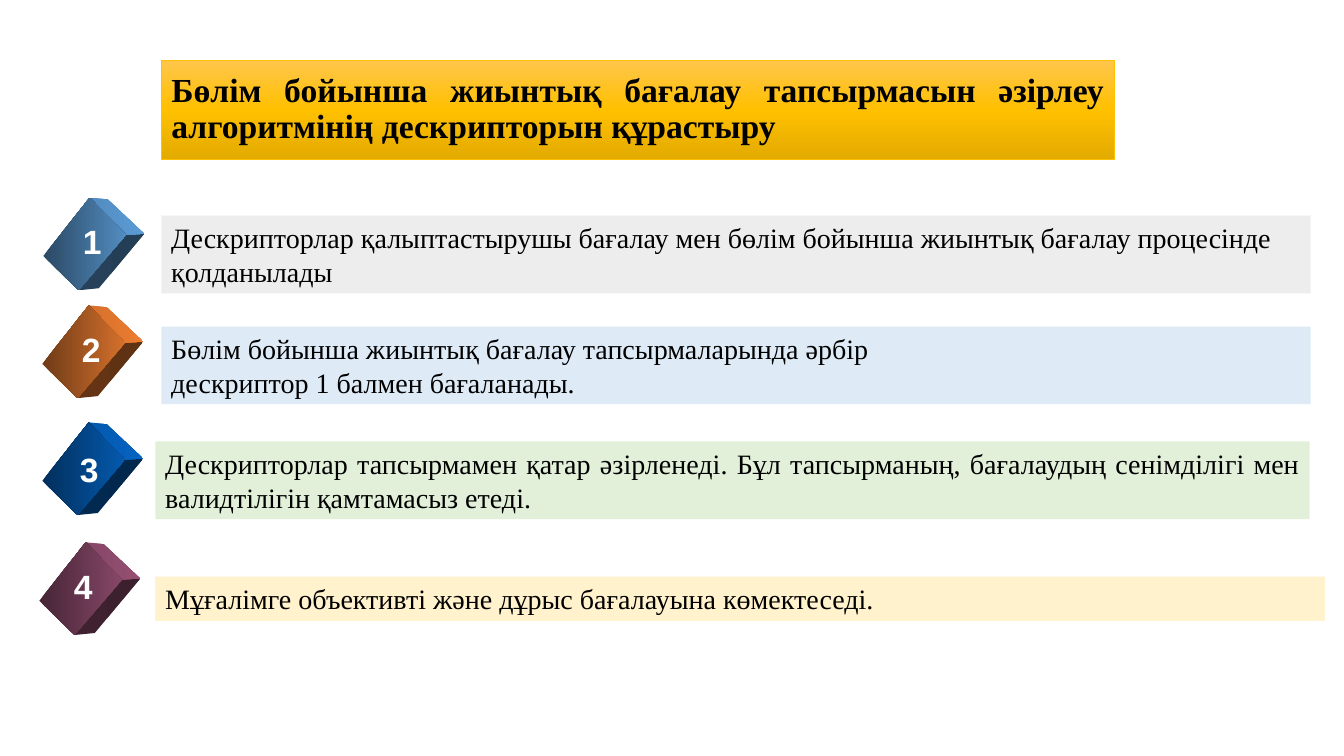
from pptx import Presentation
from pptx.dml.color import RGBColor
from pptx.enum.shapes import MSO_SHAPE
from pptx.enum.text import MSO_ANCHOR, PP_ALIGN
from pptx.oxml.ns import qn
from pptx.util import Inches, Pt
from lxml.etree import SubElement

COLORS = {
    "black": "000000", "white": "FFFFFF", "title_line": "FFC000",
    "title_top": "FFC64B", "title_middle": "FFC000", "title_bottom": "E3AB00",
}
TITLE = "Бөлім бойынша жиынтық бағалау тапсырмасын әзірлеу алгоритмінің дескрипторын құрастыру"
FRONT_FACE = [(0, 0.58), (0.46, 0), (0.82, 0.37), (0.35, 0.92)]
TOP_FACE = [(0.46, 0), (0.64, 0.02), (1, 0.36), (0.82, 0.37)]
SIDE_FACE = [(0.82, 0.37), (1, 0.36), (0.55, 0.9), (0.35, 0.92)]
ROWS = [
    {"cube": (0.43, 1.96), "number": (0.72, 2.14), "color": "5B9BD5",
     "bar": (1.6, 2.14, 11.4, 0.77), "fill": "EDEDED", "align": PP_ALIGN.LEFT,
     "lines": ["Дескрипторлар қалыптастырушы бағалау мен бөлім бойынша жиынтық бағалау процесінде қолданылады"]},
    {"cube": (0.42, 3.03), "number": (0.71, 3.21), "color": "ED7D31",
     "bar": (1.6, 3.24, 11.4, 0.77), "fill": "DEEBF7", "align": PP_ALIGN.LEFT,
     "lines": ["Бөлім бойынша жиынтық бағалау тапсырмаларында әрбір",
               "дескриптор 1 балмен бағаланады."]},
    {"cube": (0.42, 4.19), "number": (0.69, 4.4), "color": "0563C1",
     "bar": (1.54, 4.38, 11.45, 0.77), "fill": "E2F0D9", "align": PP_ALIGN.JUSTIFY,
     "lines": ["Дескрипторлар тапсырмамен қатар әзірленеді. Бұл тапсырманың, бағалаудың сенімділігі мен "
               "валидтілігін қамтамасыз етеді."]},
    {"cube": (0.39, 5.38), "number": (0.63, 5.57), "color": "954F72",
     "bar": (1.54, 5.72, 11.6, 0.44), "fill": "FFF2CC", "align": PP_ALIGN.LEFT,
     "lines": ["Мұғалімге объективті және дұрыс бағалауына көмектеседі."]},
]


def shade(color, factor):
    """Return the colour darkened by a factor."""
    return "".join(f"{round(int(color[i:i + 2], 16) * factor):02X}" for i in (0, 2, 4))


def fill_gradient(shape, colors, angle):
    """Fill a shape with evenly spaced gradient colours."""
    shape.fill.gradient()
    shape.fill.gradient_angle = angle
    stops = shape._element.spPr.find(".//" + qn("a:gsLst"))
    for stop in list(stops):
        stops.remove(stop)
    for index, color in enumerate(colors):
        position = round(100000 * index / (len(colors) - 1))
        stop = SubElement(stops, qn("a:gs"), pos=str(position))
        SubElement(stop, qn("a:srgbClr"), val=color)


def write_lines(shape, lines, size, font_name, color, align, bold=False):
    """Write one formatted paragraph per line."""
    frame = shape.text_frame
    frame.word_wrap = True
    frame.text = "\n".join(lines)
    for para in frame.paragraphs:
        para.alignment = align
        para.font.size = Pt(size)
        para.font.name = font_name
        para.font.bold = bold
        para.font.color.rgb = RGBColor.from_string(color)


def add_title(page, box):
    """Place the gold title banner in the box."""
    title = page.shapes.title
    title.left, title.top, title.width, title.height = map(Inches, box)
    fill_gradient(title, [COLORS["title_top"], COLORS["title_middle"], COLORS["title_bottom"]], 270)
    title.line.color.rgb = RGBColor.from_string(COLORS["title_line"])
    title.line.width = Pt(0.5)
    write_lines(title, [TITLE], 24, "Times New Roman", COLORS["black"], PP_ALIGN.JUSTIFY, True)
    title.text_frame.vertical_anchor = MSO_ANCHOR.MIDDLE
    title.text_frame.paragraphs[0].line_spacing = 0.9


def add_face(page, corner, points, colors, angle):
    """Draw one face of a cube from its corner."""
    spots = [(Inches(corner[0] + x), Inches(corner[1] + y)) for x, y in points]
    builder = page.shapes.build_freeform(*spots[0])
    builder.add_line_segments(spots[1:], close=True)
    face = builder.convert_to_shape()
    face.shadow.inherit = False
    face.line.fill.background()
    fill_gradient(face, colors, angle)


def add_cube(page, corner, color):
    """Draw a tilted cube with three shaded faces."""
    add_face(page, corner, SIDE_FACE, [shade(color, 0.42), shade(color, 0.4)], 0)
    add_face(page, corner, TOP_FACE, [shade(color, 0.9), color], 0)
    add_face(page, corner, FRONT_FACE, [shade(color, 0.47), shade(color, 0.9)], 0)


def add_bar(page, box, row):
    """Place the coloured text bar in the box."""
    bar = page.shapes.add_shape(MSO_SHAPE.RECTANGLE, *map(Inches, box))
    bar.shadow.inherit = False
    bar.fill.solid()
    bar.fill.fore_color.rgb = RGBColor.from_string(row["fill"])
    bar.line.fill.background()
    write_lines(bar, row["lines"], 20, "Times New Roman", COLORS["black"], row["align"])
    bar.text_frame.vertical_anchor = MSO_ANCHOR.TOP


def add_row(page, number, row):
    """Place a numbered cube and its text bar."""
    add_cube(page, row["cube"], row["color"])
    label = page.shapes.add_textbox(*map(Inches, (*row["number"], 0.39, 0.5)))
    write_lines(label, [str(number)], 24, "Arial", COLORS["white"], PP_ALIGN.CENTER, True)
    add_bar(page, row["bar"], row)


def main():
    """Build and save the deck."""
    deck = Presentation()
    deck.slide_width, deck.slide_height = Inches(13.33), Inches(7.5)
    page = deck.slides.add_slide(deck.slide_layouts[5])
    add_title(page, (1.6, 0.6, 9.45, 0.98))
    for number, row in enumerate(ROWS, 1):
        add_row(page, number, row)
    deck.save("out.pptx")


if __name__ == "__main__":
    main()
